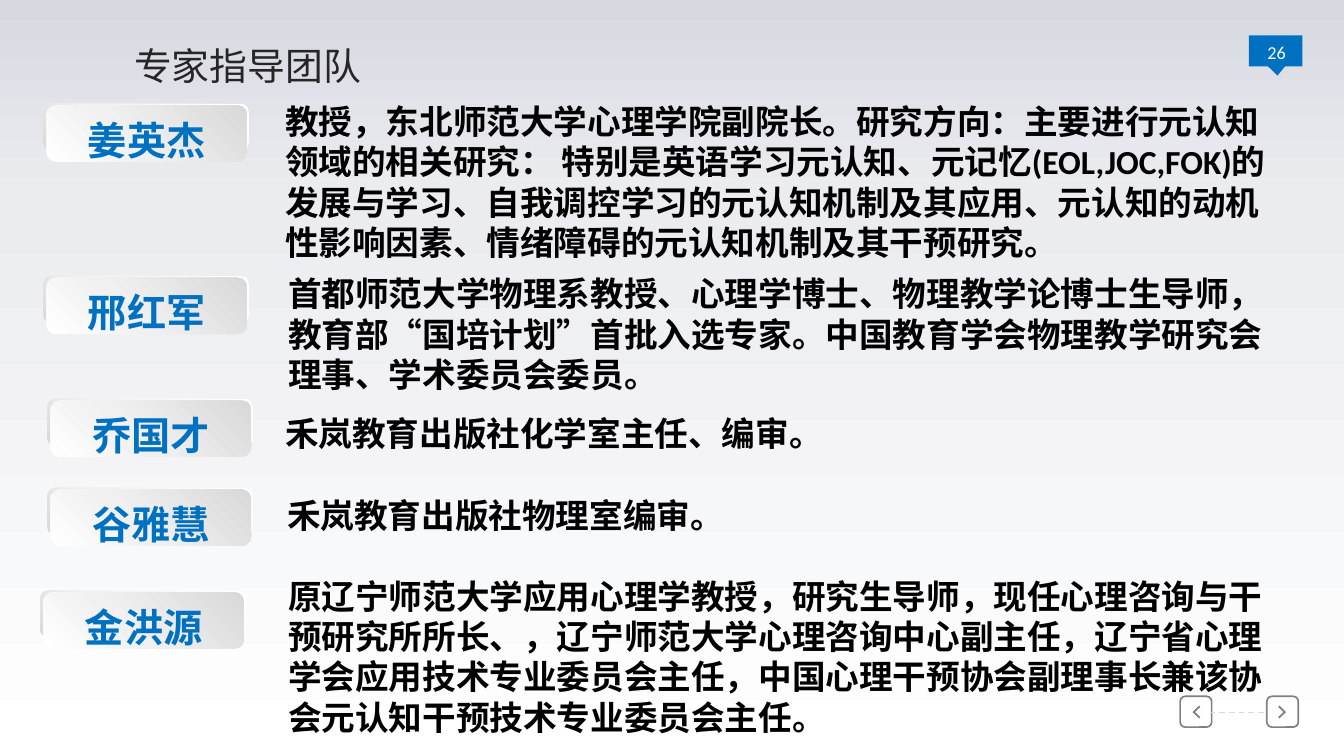
from dataclasses import dataclass

from lxml import etree
from pptx import Presentation
from pptx.dml.color import RGBColor
from pptx.enum.dml import MSO_LINE
from pptx.enum.shapes import MSO_CONNECTOR, MSO_SHAPE
from pptx.enum.text import MSO_ANCHOR, PP_ALIGN
from pptx.oxml.ns import qn
from pptx.util import Pt

RECTANGLE = MSO_SHAPE.RECTANGLE
ROUNDED = MSO_SHAPE.ROUNDED_RECTANGLE
TRIANGLE = MSO_SHAPE.ISOSCELES_TRIANGLE
STRAIGHT = MSO_CONNECTOR.STRAIGHT
DASH = MSO_LINE.DASH
TOP, MIDDLE = MSO_ANCHOR.TOP, MSO_ANCHOR.MIDDLE
LEFT, CENTER = PP_ALIGN.LEFT, PP_ALIGN.CENTER

LATIN_FONT = "Calibri"
CHINESE_FONT = "Noto Sans CJK SC"
COLORS = {
    "blue": "0070C0",
    "white": "FFFFFF",
    "black": "000000",
    "title": "262626",
    "button": "808080",
    "dash": "D9D9D9",
}
PAGE_STOPS = [(0, "D7D9E1"), (26, "EBECF0"), (100, "FFFFFF")]
BACK_STOPS = [(0, "FFFFFF"), (62, "F2F2F2"), (100, "D9D9D9")]
FRONT_STOPS = [(0, "FFFFFF"), (42, "F0F0F0"), (100, "D9D9D9")]
CHEVRON = [(4.7, 0), (0, 4.6), (4.7, 9.2), (5.6, 8.2), (1.8, 4.6), (5.6, 1)]


@dataclass
class Expert:
    name: str
    plate_left: float
    plate_top: float
    profile: str
    profile_left: float
    profile_top: float
    profile_width: float
    profile_height: float


@dataclass
class TextStyle:
    size: float
    font: str
    color: str
    bold: bool = False
    align: PP_ALIGN = LEFT
    spacing: float | Pt = 1.0


TITLE_STYLE = TextStyle(27, CHINESE_FONT, "title")
NUMBER_STYLE = TextStyle(13, LATIN_FONT, "white", align=CENTER)
NAME_STYLE = TextStyle(28, CHINESE_FONT, "blue", True, CENTER)
PROFILE_STYLE = TextStyle(24, LATIN_FONT, "black", True, spacing=Pt(28.8))

EXPERTS = [
    Expert("姜英杰", 31, 74.2,
           "教授，东北师范大学心理学院副院长。研究方向：主要进行元认知领域的相关研究： "
           "特别是英语学习元认知、元记忆(EOL,JOC,FOK)的发展与学习、自我调控学习的"
           "元认知机制及其应用、元认知的动机性影响因素、情绪障碍的元认知机制及其干预研究。",
           196.6, 67.7, 720, 123.8),
    Expert("邢红军", 31, 197.3,
           "首都师范大学物理系教授、心理学博士、物理教学论博士生导师，教育部“国培计划”"
           "首批入选专家。中国教育学会物理教学研究会理事、学术委员会委员。",
           198.7, 190.8, 717.8, 94.3),
    Expert("乔国才", 33.9, 285,
           "禾岚教育出版社化学室主任、编审。", 196.6, 290.9, 720, 36),
    Expert("谷雅慧", 33.9, 348.6,
           "禾岚教育出版社物理室编审。", 198, 349.2, 720, 36),
    Expert("金洪源", 28.8, 422,
           "原辽宁师范大学应用心理学教授，研究生导师，现任心理咨询与干预研究所所长、，"
           "辽宁师范大学心理咨询中心副主任，辽宁省心理学会应用技术专业委员会主任，"
           "中国心理干预协会副理事长兼该协会元认知干预技术专业委员会主任。",
           198.7, 406.8, 720, 123.8),
]


def rgb(name: str) -> RGBColor:
    return RGBColor.from_string(COLORS[name])


def paint_gradient(fill, holder, stops: list, angle: float) -> None:
    fill.gradient()
    fill.gradient_angle = 360 - angle
    stop_list = holder.find(".//" + qn("a:gsLst"))
    for old_stop in list(stop_list):
        stop_list.remove(old_stop)
    for position, color in stops:
        stop = etree.SubElement(stop_list, qn("a:gs"), pos=str(position * 1000))
        etree.SubElement(stop, qn("a:srgbClr"), val=color)


def write_text(box, text: str, style: TextStyle, margins: tuple,
               anchor: MSO_ANCHOR = TOP, wrap: bool = True) -> None:
    frame = box.text_frame
    frame.word_wrap = wrap
    frame.vertical_anchor = anchor
    (frame.margin_left, frame.margin_top,
     frame.margin_right, frame.margin_bottom) = map(Pt, margins)
    para = frame.paragraphs[0]
    para.alignment = style.align
    para.line_spacing = style.spacing
    span = para.add_run()
    span.text = text
    span.font.size = Pt(style.size)
    span.font.bold = style.bold
    span.font.color.rgb = rgb(style.color)
    span.font.name = style.font
    latin = span.font._element.find(qn("a:latin"))
    latin.addnext(latin.makeelement(qn("a:ea"), {"typeface": CHINESE_FONT}))


def add_plain_shape(shapes, kind: MSO_SHAPE, left: float, top: float,
                    width: float, height: float):
    shape = shapes.add_shape(kind, Pt(left), Pt(top), Pt(width), Pt(height))
    shape.shadow.inherit = False
    shape.line.fill.background()
    return shape


def add_page_badge(page) -> None:
    flag = add_plain_shape(page.shapes, RECTANGLE, 892.1, 25.2, 38.2, 22.3)
    pointer = add_plain_shape(page.shapes, TRIANGLE, 892.8, 33.1, 38.2, 20.9)
    pointer.rotation = 176.8
    for part in (flag, pointer):
        part.fill.solid()
        part.fill.fore_color.rgb = rgb("blue")
    number = page.shapes.add_textbox(Pt(894.2), Pt(21.6), Pt(35.3), Pt(36.7))
    write_text(number, "26", NUMBER_STYLE, (0, 0, 0, 5), MIDDLE)


def add_button(page, left: float, chevron_left: float, mirrored: bool) -> None:
    frame = add_plain_shape(page.shapes, ROUNDED, left, 497.4, 22.5, 22)
    frame.fill.background()
    frame.line.color.rgb = rgb("button")
    frame.line.width = Pt(1.2)
    points = [(Pt(chevron_left + (5.6 - x if mirrored else x)), Pt(504 + y))
              for x, y in CHEVRON]
    builder = page.shapes.build_freeform(*points[0])
    builder.add_line_segments(points[1:], close=True)
    chevron = builder.convert_to_shape()
    chevron.shadow.inherit = False
    chevron.fill.solid()
    chevron.fill.fore_color.rgb = rgb("button")
    chevron.line.fill.background()


def add_navigation(page) -> None:
    add_button(page, 843, 851.8, False)
    add_button(page, 904.9, 913, True)
    link = page.shapes.add_connector(STRAIGHT, Pt(864), Pt(509), Pt(904.3), Pt(509))
    link.line.color.rgb = rgb("dash")
    link.line.width = Pt(1)
    link.line.dash_style = DASH
    etree.SubElement(link._element.spPr, qn("a:effectLst"))


def add_expert(page, expert: Expert) -> None:
    left, top = expert.plate_left, expert.plate_top
    plate = page.shapes.add_group_shape().shapes
    back = add_plain_shape(plate, ROUNDED, left, top, 146.9, 33.1)
    paint_gradient(back.fill, back._element, BACK_STOPS, 135)
    front = add_plain_shape(plate, ROUNDED, left + 2.1, top + 1.1, 143.3, 40.3)
    paint_gradient(front.fill, front._element, FRONT_STOPS, 315)
    name = plate.add_textbox(Pt(left + 22.3), Pt(top + 8.6), Pt(103), Pt(33.8))
    write_text(name, expert.name, NAME_STYLE, (0, 0, 0, 0))
    profile = page.shapes.add_textbox(
        Pt(expert.profile_left), Pt(expert.profile_top),
        Pt(expert.profile_width), Pt(expert.profile_height))
    write_text(profile, expert.profile, PROFILE_STYLE, (7.2, 4.4, 7.2, 3.6))


def main() -> None:
    deck = Presentation()
    deck.slide_width, deck.slide_height = Pt(960), Pt(540)
    page = deck.slides.add_slide(deck.slide_layouts[5])
    paint_gradient(page.background.fill, page._element, PAGE_STOPS, 90)
    add_page_badge(page)
    add_navigation(page)
    title = page.shapes.title
    title.left, title.top, title.width, title.height = map(Pt, (88.6, 26.6, 177.8, 40.3))
    write_text(title, "专家指导团队", TITLE_STYLE, (7.2, 3.6, 7.2, 3.6), wrap=False)
    for expert in EXPERTS:
        add_expert(page, expert)
    deck.save("out.pptx")


if __name__ == "__main__":
    main()
